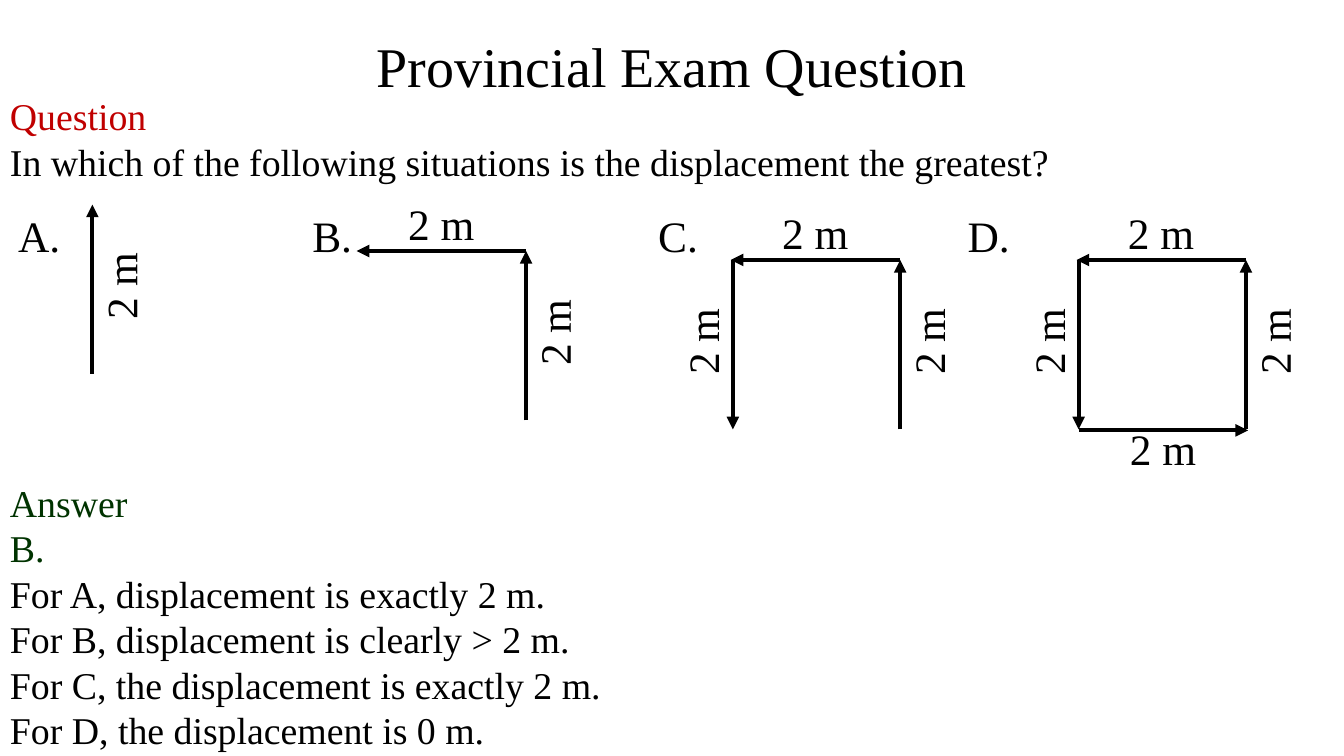
"""Build the displacement exam question slide with its four arrow diagrams."""
from dataclasses import dataclass

from lxml import etree
from pptx import Presentation
from pptx.dml.color import RGBColor
from pptx.enum import shapes, text
from pptx.oxml import ns
from pptx.util import Pt


@dataclass(frozen=True)
class Theme:
    font: str = "Times New Roman"
    ink: str = "000000"
    question: str = "C00000"
    answer: str = "003300"
    title_size: int = 40
    body_size: int = 27
    label_size: int = 31
    line_width: int = 3


theme = Theme()
prs = Presentation()
prs.slide_width, prs.slide_height = Pt(960), Pt(540)
s = prs.slides.add_slide(prs.slide_layouts[6])


def add_text(box, lines, size, wrap=True, rotation=0):
    sp = s.shapes.add_textbox(*map(Pt, box))
    sp.rotation = rotation
    tf = sp.text_frame
    tf.word_wrap = wrap
    tf.auto_size = text.MSO_AUTO_SIZE.SHAPE_TO_FIT_TEXT
    for i, (line, color) in enumerate(lines):
        p = tf.add_paragraph() if i else tf.paragraphs[0]
        p.text = line
        p.font.name = theme.font
        p.font.size = Pt(size)
        p.font.color.rgb = RGBColor.from_string(color)
    return tf


def add_arrow(x1, y1, x2, y2):
    c = s.shapes.add_connector(shapes.MSO_CONNECTOR.STRAIGHT, Pt(x1), Pt(y1), Pt(x2), Pt(y2))
    c.line.color.rgb = RGBColor.from_string(theme.ink)
    c.line.width = Pt(theme.line_width)
    etree.SubElement(c.line._get_or_add_ln(), ns.qn("a:tailEnd"), type="triangle")
    etree.SubElement(c._element.spPr, ns.qn("a:effectLst"))


tf = add_text((66, 10, 828, 79), [("Provincial Exam Question", theme.ink)], theme.title_size)
tf.auto_size = text.MSO_AUTO_SIZE.NONE
tf.vertical_anchor = text.MSO_ANCHOR.MIDDLE
tf.paragraphs[0].alignment = text.PP_ALIGN.CENTER
tf.paragraphs[0].line_spacing = 0.9

add_text((0, 62.8, 929.5, 72.7), [
    ("Question", theme.question),
    ("In which of the following situations is the displacement the greatest?", theme.ink),
], theme.body_size)
add_text((0, 339.1, 908.6, 203.8), [
    ("Answer", theme.answer),
    ("B.", theme.answer),
    ("For A, displacement is exactly 2 m.", theme.ink),
    ("For B, displacement is clearly > 2 m.", theme.ink),
    ("For C, the displacement is exactly 2 m.", theme.ink),
    ("For D, the displacement is 0 m.", theme.ink),
], theme.body_size)

side = 121
letter_w, label_w, label_h = 45.5, 62.6, 44.6
steps = [
    ((0, 0, 0, -side), (-11.5, -85.5), 270),
    ((0, -side, -side, -side), (-91.4, -163), 0),
    ((-119.5, -side, -119.5, 0), (-172.8, -85.5), 270),
    ((-119.5, 0.7, 1.5, 0.7), (-90, -8.6), 0),
]
options = [
    ("A.", 5.8, 66, 267.1),
    ("B.", 216, 375.8, 300.3),
    ("C.", 463, 643, 306.7),
    ("D.", 684, 890, 306.7),
]
for count, (letter, letter_x, x, y) in enumerate(options, 1):
    add_text((letter_x, 146, letter_w, label_h), [(letter, theme.ink)],
             theme.label_size, wrap=False)
    for (x1, y1, x2, y2), (dx, dy), rotation in steps[:count]:
        add_arrow(x + x1, y + y1, x + x2, y + y2)
        add_text((x + dx, y + dy, label_w, label_h), [("2 m", theme.ink)],
                 theme.label_size, wrap=False, rotation=rotation)

prs.save("out.pptx")
